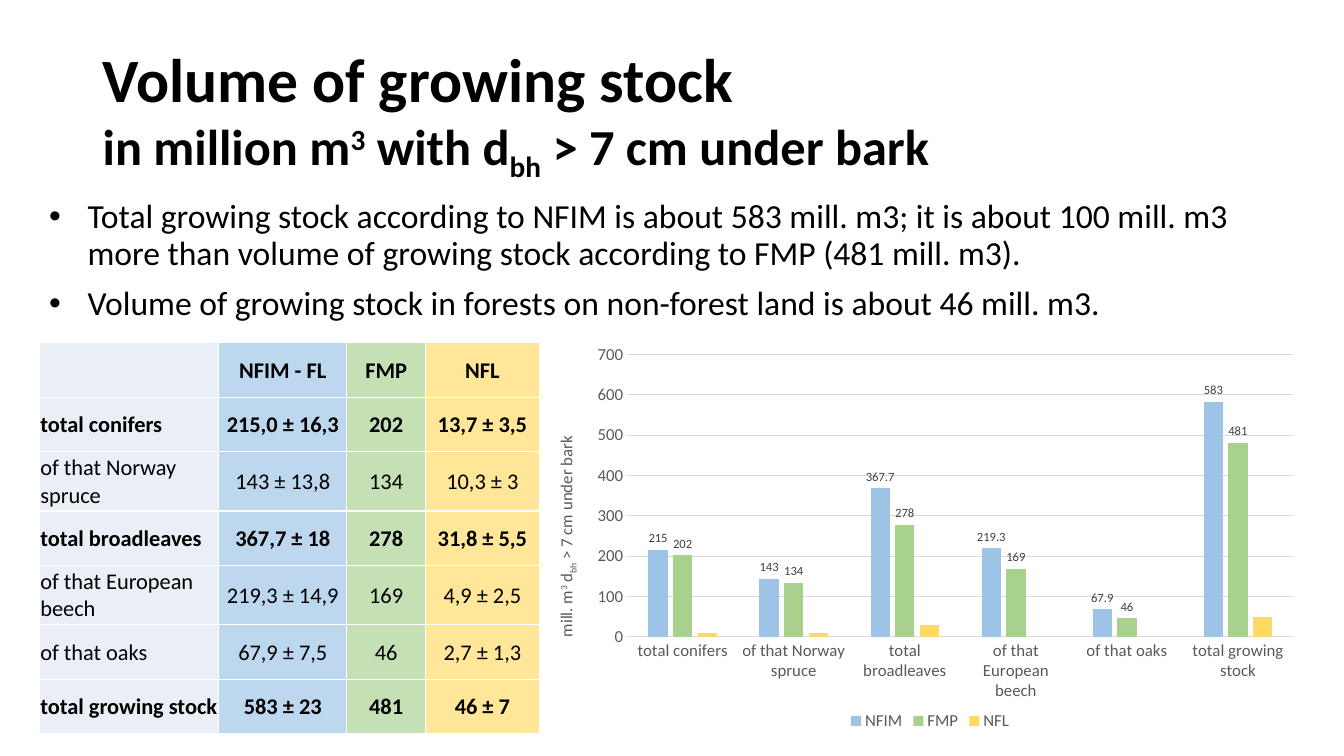
import dataclasses

import lxml.etree
import pptx
import pptx.chart.data
import pptx.dml.color
import pptx.enum.chart
import pptx.enum.text
import pptx.oxml
import pptx.oxml.ns
import pptx.util

Inches = pptx.util.Inches
Pt = pptx.util.Pt
qn = pptx.oxml.ns.qn
ALIGN = pptx.enum.text.PP_ALIGN
ANCHOR = pptx.enum.text.MSO_ANCHOR


@dataclasses.dataclass(frozen=True)
class Theme:
    font: str = "Calibri"
    ink: str = "000000"
    axis_ink: str = "595959"
    label_ink: str = "404040"
    grid: str = "D9D9D9"
    border: str = "FFFFFF"
    column_fills: tuple = ("EAEFF7", "BDD7EE", "C5E0B4", "FFE699")
    series_fills: tuple = ("9DC3E6", "A9D18E", "FFD966")
    title_size: int = 44
    subtitle_size: int = 36
    body_size: int = 24
    table_size: int = 16
    chart_size: int = 10
    axis_size: int = 12
    label_size: int = 9


THEME = Theme()
SUPER, SUB = 30000, -25000

STOCK_TABLE = [
    ("", "NFIM - FL", "FMP", "NFL"),
    ("total conifers", "215,0 ± 16,3", "202", "13,7 ± 3,5"),
    ("of that Norway spruce", "143 ± 13,8", "134", "10,3 ± 3"),
    ("total broadleaves", "367,7 ± 18", "278", "31,8 ± 5,5"),
    ("of that European beech", "219,3 ± 14,9", "169", "4,9 ± 2,5"),
    ("of that oaks", "67,9 ± 7,5", "46", "2,7 ± 1,3"),
    ("total growing stock", "583 ± 23", "481", "46 ± 7"),
]
STOCK_SERIES = {
    "NFIM": (215, 143, 367.7, 219.3, 67.9, 583),
    "FMP": (202, 134, 278, 169, 46, 481),
    "NFL": (10, 10, 30, 0, 0, 50),
}


def rgb(color):
    return pptx.dml.color.RGBColor.from_string(color)


def style_font(font, size, color=THEME.ink, bold=False):
    font.name = THEME.font
    font.size = Pt(size)
    font.bold = bold
    font.color.rgb = rgb(color)


def write(paragraph, text, *, size, color=THEME.ink, bold=False, baseline=0,
          align=None, line_spacing=None, space_before=None):
    run = paragraph.add_run()
    run.text = text
    style_font(run.font, size, color, bold)
    if baseline:
        run._r.get_or_add_rPr().set("baseline", str(baseline))
    if align is not None:
        paragraph.alignment = align
    if line_spacing:
        paragraph.line_spacing = line_spacing
    if space_before:
        paragraph.space_before = Pt(space_before)


def write_formula(paragraph, parts, **style):
    for text, baseline in parts:
        write(paragraph, text, baseline=baseline, **style)


def add_text_frame(slide, left, top, width, height, anchor):
    frame = slide.shapes.add_textbox(
        Inches(left), Inches(top), Inches(width), Inches(height)).text_frame
    frame.word_wrap = True
    frame.vertical_anchor = anchor
    return frame


def add_bullet(paragraph, indent):
    properties = paragraph._p.get_or_add_pPr()
    properties.set("marL", str(Inches(indent)))
    properties.set("indent", str(-Inches(indent)))
    bullet_font = lxml.etree.SubElement(properties, qn("a:buFont"))
    bullet_font.set("typeface", "Arial")
    lxml.etree.SubElement(properties, qn("a:buChar")).set("char", "•")


def add_title(slide):
    heading = add_text_frame(slide, 0.92, 0.4, 11.5, 1.45, ANCHOR.MIDDLE).paragraphs[0]
    write(heading, "Volume of growing stock", size=THEME.title_size, bold=True, line_spacing=0.9)
    heading.add_line_break()
    write_formula(
        heading,
        [("in million m", 0), ("3", SUPER), (" with d", 0), ("bh", SUB), (" ˃ 7 cm under bark", 0)],
        size=THEME.subtitle_size, bold=True)


def add_findings(slide, findings):
    frame = add_text_frame(slide, 0.39, 1.84, 12.6, 1.41, ANCHOR.BOTTOM)
    for index, finding in enumerate(findings):
        paragraph = frame.add_paragraph() if index else frame.paragraphs[0]
        write(paragraph, finding, size=THEME.body_size, line_spacing=0.9, space_before=10)
        add_bullet(paragraph, 0.38)


def format_cell(cell, fill):
    cell.vertical_anchor = ANCHOR.MIDDLE
    cell.margin_left = cell.margin_right = cell.margin_top = Inches(0.01)
    cell.margin_bottom = 0
    properties = cell._tc.get_or_add_tcPr()
    for side in ("a:lnL", "a:lnR", "a:lnT", "a:lnB"):
        line = lxml.etree.SubElement(properties, qn(side), w=str(Pt(1)))
        solid = lxml.etree.SubElement(line, qn("a:solidFill"))
        lxml.etree.SubElement(solid, qn("a:srgbClr"), val=THEME.border)
    cell.fill.solid()
    cell.fill.fore_color.rgb = rgb(fill)


def add_stock_table(slide):
    table = slide.shapes.add_table(
        len(STOCK_TABLE), len(STOCK_TABLE[0]),
        Inches(0.39), Inches(3.4), Inches(4.96), Inches(3.89)).table
    table.first_row = table.horz_banding = False
    for column, width in zip(table.columns, (1.78, 1.27, 0.78, 1.13)):
        column.width = Inches(width)
    for row_index, values in enumerate(STOCK_TABLE):
        detail = values[0].startswith("of that")
        two_lines = detail and len(values[0]) > 15
        table.rows[row_index].height = Inches(0.59 if two_lines else 0.54)
        for column_index, value in enumerate(values):
            cell = table.cell(row_index, column_index)
            format_cell(cell, THEME.column_fills[column_index])
            write(cell.text_frame.paragraphs[0], value, size=THEME.table_size,
                  bold=not detail, align=ALIGN.CENTER if column_index else ALIGN.LEFT)


def place(element, **settings):
    layout = element.find(qn("c:layout"))
    if layout is None:
        layout = pptx.oxml.parse_xml(
            '<c:layout xmlns:c="http://schemas.openxmlformats.org/drawingml/2006/chart"/>')
        text = element.find(qn("c:tx"))
        element.insert(0 if text is None else element.index(text) + 1, layout)
    for child in list(layout):
        layout.remove(child)
    manual = lxml.etree.SubElement(layout, qn("c:manualLayout"))
    for name, value in settings.items():
        lxml.etree.SubElement(manual, qn("c:" + name), val=str(value))


def format_axes(chart):
    for axis in (chart.category_axis, chart.value_axis):
        style_font(axis.tick_labels.font, THEME.axis_size, THEME.axis_ink)
        axis.major_tick_mark = axis.minor_tick_mark = pptx.enum.chart.XL_TICK_MARK.NONE
    volume = chart.value_axis
    volume.minimum_scale, volume.maximum_scale, volume.major_unit = 0, 700, 100
    volume.format.line.fill.background()
    for line in (chart.category_axis.format.line, volume.major_gridlines.format.line):
        line.color.rgb = rgb(THEME.grid)
        line.width = Pt(0.75)
    frame = volume.axis_title.text_frame
    frame._txBody.find(qn("a:bodyPr")).set("rot", "-5400000")
    write_formula(
        frame.paragraphs[0],
        [("mill. m", 0), ("3", SUPER), (" d", 0), ("bh", SUB), (" ˃ 7 cm under bark", 0)],
        size=THEME.axis_size, color=THEME.axis_ink)
    place(volume.axis_title._element, xMode="edge", yMode="edge", x=0, y=0.23)


def add_stock_chart(slide):
    stock = pptx.chart.data.CategoryChartData()
    stock.categories = [row[0] for row in STOCK_TABLE[1:]]
    for name, volumes in STOCK_SERIES.items():
        stock.add_series(name, volumes)
    chart = slide.shapes.add_chart(
        pptx.enum.chart.XL_CHART_TYPE.COLUMN_CLUSTERED,
        Inches(5.47), Inches(3.4), Inches(7.51), Inches(3.89), stock).chart
    style_font(chart.font, THEME.chart_size)
    chart.has_title = False
    chart.has_legend = True
    chart.legend.position = pptx.enum.chart.XL_LEGEND_POSITION.BOTTOM
    chart.legend.include_in_layout = False
    style_font(chart.legend.font, THEME.axis_size, THEME.axis_ink)
    format_axes(chart)
    bars = chart.plots[0]
    bars.gap_width, bars.overlap, bars.vary_by_categories = 219, -27, False
    for series, fill in zip(bars.series, THEME.series_fills):
        series.format.fill.solid()
        series.format.fill.fore_color.rgb = rgb(fill)
        if series.name != "NFL":
            labels = series.data_labels
            labels.show_value = True
            labels.position = pptx.enum.chart.XL_LABEL_POSITION.OUTSIDE_END
            style_font(labels.font, THEME.label_size, THEME.label_ink)
    place(chart._chartSpace.chart.plotArea, layoutTarget="inner", xMode="edge", yMode="edge",
          x=0.1, y=0.03, w=0.88, h=0.72)


def main():
    presentation = pptx.Presentation()
    presentation.slide_width, presentation.slide_height = Inches(13.33), Inches(7.5)
    slide = presentation.slides.add_slide(presentation.slide_layouts[6])
    add_title(slide)
    add_findings(slide, [
        "Total growing stock according to NFIM is about 583 mill. m3; it is about 100 mill. m3 "
        "more than volume of growing stock according to FMP (481 mill. m3).",
        "Volume of growing stock in forests on non-forest land is about 46 mill. m3.",
    ])
    add_stock_table(slide)
    add_stock_chart(slide)
    presentation.save("out.pptx")


if __name__ == "__main__":
    main()
